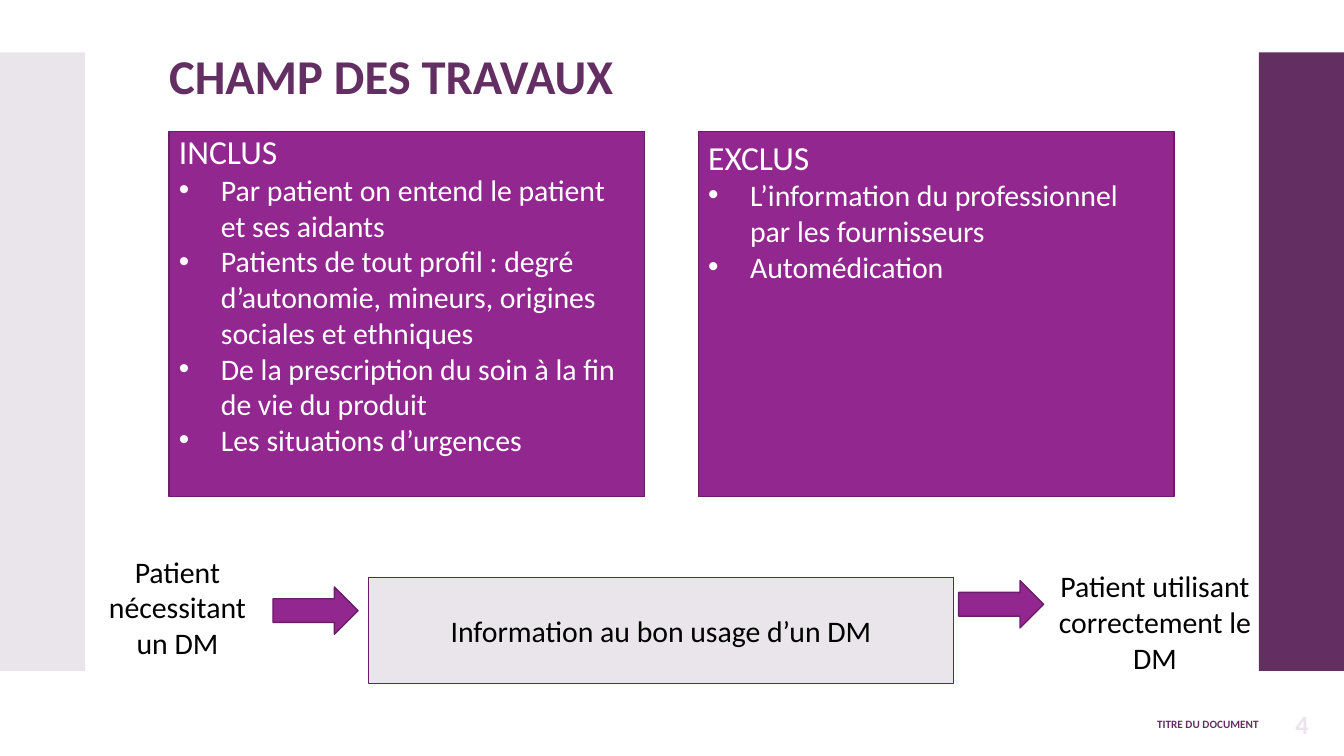
from lxml import etree
from pptx import Presentation
from pptx import util as u
from pptx.dml.color import RGBColor
from pptx.enum import shapes, text
from pptx.oxml.ns import qn

PX = 9525  # EMU per px: the slide is 1280 x 720 px
FONT = "Calibri"
PLUM, PURPLE, EDGE, PALE = "632E62", "92278F", "6C1D6A", "EAE5EB"
BLACK, WHITE = "000000", "FFFFFF"
HEADING_SIZE, BODY_SIZE = 24, 21.3
BULLET_INDENT = 40
LEFT, CENTER, RIGHT = text.PP_ALIGN.LEFT, text.PP_ALIGN.CENTER, text.PP_ALIGN.RIGHT
RECTANGLE = shapes.MSO_SHAPE.RECTANGLE
ARROW = shapes.MSO_SHAPE.RIGHT_ARROW

PANELS = [
    # left, top inset, heading, bullet points
    (161, 0, "INCLUS", [
        "Par patient on entend le patient et ses aidants",
        "Patients de tout profil : degré d’autonomie, mineurs, origines sociales et ethniques",
        "De la prescription du soin à la fin de vie du produit",
        "Les situations d’urgences",
    ]),
    (665, 5, "EXCLUS", [
        "L’information du professionnel par les fournisseurs",
        "Automédication",
    ]),
]


def px(*lengths):
    return [u.Emu(length * PX) for length in lengths]


def color(value):
    return RGBColor.from_string(value)


def write(paragraph, words, size, ink, align=LEFT, bold=False):
    paragraph.text = words
    paragraph.alignment = align
    font = paragraph.font
    font.name, font.size, font.bold = FONT, u.Pt(size), bold
    font.color.rgb = color(ink)


def add_bullet(paragraph):
    properties = paragraph._p.get_or_add_pPr()
    indent = BULLET_INDENT * PX
    properties.set("marL", str(indent))
    properties.set("indent", str(-indent))
    etree.SubElement(properties, qn("a:buFont")).set("typeface", "Arial")
    etree.SubElement(properties, qn("a:buChar")).set("char", "•")
    # The schema wants bullets ahead of the default run properties
    defaults = properties.find(qn("a:defRPr"))
    if defaults is not None:
        properties.append(defaults)


def add_block(slide, kind, box, fill, line=None):
    shape = slide.shapes.add_shape(kind, *px(*box))
    shape.shadow.inherit = False
    shape.fill.solid()
    shape.fill.fore_color.rgb = color(fill)
    if line:
        shape.line.color.rgb = color(line)
        shape.line.width = u.Pt(1)
    else:
        shape.line.fill.background()
    return shape


def add_label(slide, box, words, size, ink, align=CENTER, bold=False,
              inset=(0, 0), anchor=text.MSO_ANCHOR.TOP):
    frame = slide.shapes.add_textbox(*px(*box)).text_frame
    frame.word_wrap = True
    frame.vertical_anchor = anchor
    frame.margin_left = frame.margin_right = inset[0] * PX
    frame.margin_top = frame.margin_bottom = inset[1] * PX
    write(frame.paragraphs[0], words, size, ink, align, bold)
    return frame


def add_panel(slide, left, top_inset, heading, points):
    frame = add_block(slide, RECTANGLE, (left, 125, 453, 348), PURPLE, EDGE).text_frame
    frame.vertical_anchor = text.MSO_ANCHOR.TOP
    frame.margin_top = top_inset * PX
    write(frame.paragraphs[0], heading, HEADING_SIZE, WHITE)
    for point in points:
        paragraph = frame.add_paragraph()
        write(paragraph, point, BODY_SIZE, WHITE)
        add_bullet(paragraph)


def main():
    presentation = Presentation()
    presentation.slide_width, presentation.slide_height = px(1280, 720)
    slide = presentation.slides.add_slide(presentation.slide_layouts[6])

    # Side bands
    for left, fill in ((1199, PLUM), (0, PALE)):
        add_block(slide, RECTANGLE, (left, 50, 81, 589), fill)

    # Title
    title = add_label(slide, (161, 50, 957, 50), "CHAMP DES TRAVAUX", 34.7, PLUM, LEFT, True)
    title.paragraphs[0].line_spacing = 0.9

    # Footer and page number
    middle = text.MSO_ANCHOR.MIDDLE
    add_label(slide, (806, 675, 393, 30), "TITRE DU DOCUMENT", 8, PLUM, RIGHT, True, anchor=middle)
    add_label(slide, (1210, 675, 60, 30), "4", 18.7, PALE, CENTER, True, anchor=middle)

    # Included and excluded scope
    for panel in PANELS:
        add_panel(slide, *panel)

    # Patient path: need, information, correct use
    information = add_block(slide, RECTANGLE, (351, 550, 557, 101), PALE, EDGE).text_frame
    information.vertical_anchor = middle
    write(information.paragraphs[0], "Information au bon usage d’un DM", BODY_SIZE, BLACK, CENTER)
    for box, words in (((80, 522, 178, 113), "Patient nécessitant un DM"),
                       ((996, 536, 208, 113), "Patient utilisant correctement le DM")):
        add_label(slide, box, words, BODY_SIZE, BLACK, inset=(10, 5))
    for left, top in ((260, 559), (913, 553)):
        add_block(slide, ARROW, (left, top, 81, 45), PURPLE, EDGE)

    presentation.save("out.pptx")


if __name__ == "__main__":
    main()
